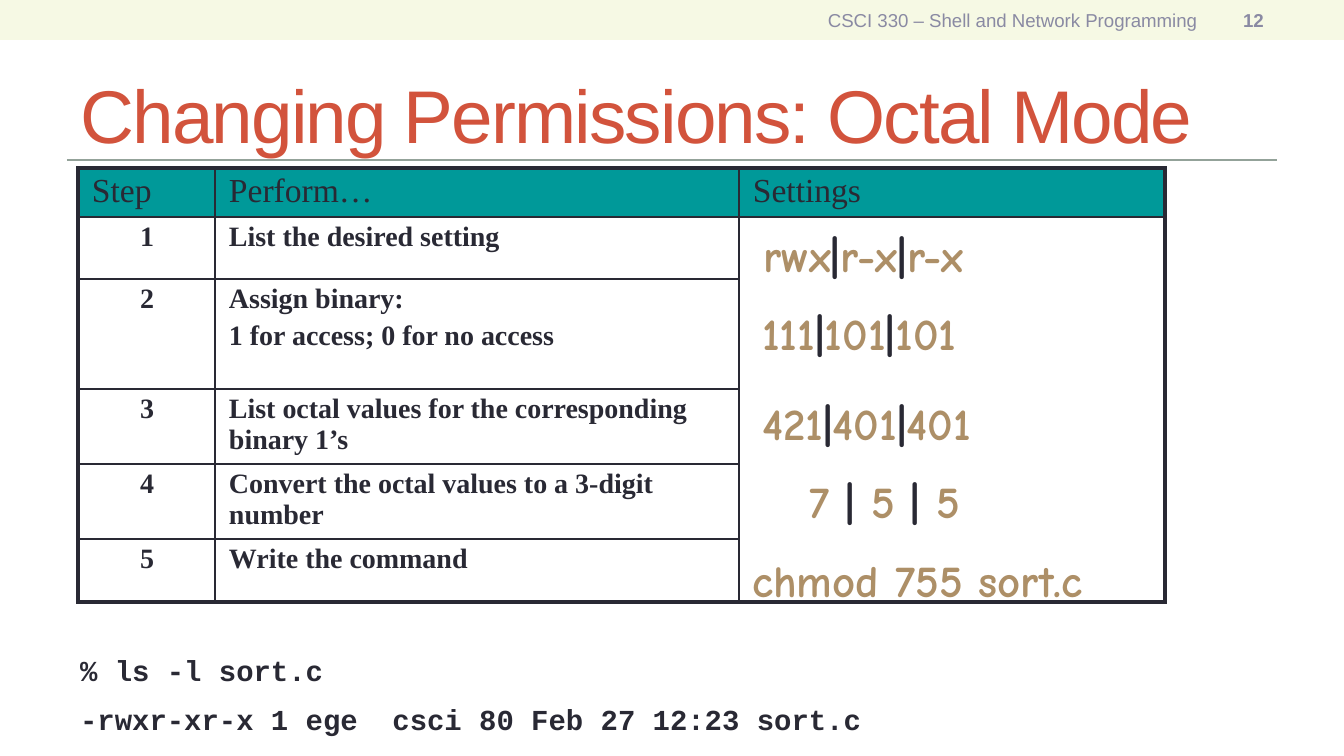
from pptx import Presentation
from pptx.dml.color import RGBColor as Rgb
from pptx.enum.shapes import MSO_CONNECTOR as Conn, MSO_SHAPE as Shape
from pptx.enum.text import MSO_ANCHOR as Anchor, MSO_AUTO_SIZE as Auto, PP_ALIGN as Align
from pptx.oxml import parse_xml
from pptx.oxml.ns import nsdecls
from pptx.util import Pt

SCALE = 914400 / 134.4
INK, TAN, TEAL, RED, GRAY = "292934", "AD8F67", "009999", "D2533C", "8A8AA3"
SMALL = dict(name="Arial", size=Pt(10))
HEAD = dict(name="Times New Roman", size=Pt(18), bold=False)
CELL = dict(name="Times New Roman", size=Pt(15), bold=True)
HAND = dict(name="Comic Neue", size=Pt(24), bold=True)
CODE = dict(name="Courier New", size=Pt(15.5), bold=True)
STEPS = [
    ["List the desired setting"],
    ["Assign binary:", "1 for access; 0 for no access"],
    ["List octal values for the corresponding binary 1’s"],
    ["Convert the octal values to a 3-digit number"],
    ["Write the command"],
]
COLS = [137, 524, 426]
ROWS = [49, 62, 110, 75, 75, 63]
VALUES = [
    ("rwx|r-x|r-x", 750, 221, 296),
    ("111|101|101", 749, 299, 313),
    ("421|401|401", 749, 389, 313),
    ("7 | 5 | 5", 796, 467, 226),
    ("chmod 755 sort.c", 739, 546, 415),
]


def px(*nums):
    """Turn px lengths into EMU."""
    return [round(n * SCALE) for n in nums]


def color(text):
    """Turn a hex string into a colour."""
    return Rgb.from_string(text)


def assign(item, values):
    """Set attributes from a dict."""
    for key, value in values.items():
        setattr(item, key, value)


def add_run(para, text, font, tint):
    """Add one formatted run to a paragraph."""
    run = para.add_run()
    run.text = text
    assign(run.font, font)
    run.font.color.rgb = color(tint)
    return run


def write(frame, lines, font, tint=INK, align=Align.LEFT, gap=0):
    """Write lines as paragraphs, with a gap between them."""
    for i, line in enumerate(lines):
        para = frame.add_paragraph() if i else frame.paragraphs[0]
        para.alignment = align
        para.space_before = Pt(gap if i else 0)
        add_run(para, line, font, tint)


def add_box(slide, box, **style):
    """Add an empty text box and return its frame."""
    frame = slide.shapes.add_textbox(*px(*box)).text_frame
    assign(frame, dict(word_wrap=True, auto_size=Auto.NONE) | style)
    return frame


def add_band(slide, box):
    """Draw the top band with course name and page number."""
    left, top, width, height = box
    band = slide.shapes.add_shape(Shape.RECTANGLE, *px(*box))
    band.shadow.inherit = False
    band.fill.solid()
    band.fill.fore_color.rgb = color("F6F9E4")
    band.line.fill.background()
    course = "CSCI 330 – Shell and Network Programming"
    for text, start, size, bold in ((course, 504, 706, False), ("12", 1210, 67, True)):
        frame = add_box(slide, (left + start, top + 2, size, height - 4),
                        vertical_anchor=Anchor.MIDDLE)
        write(frame, [text], SMALL | dict(bold=bold), GRAY, Align.RIGHT)


def add_title(slide, box):
    """Place the title and the rule under it."""
    left, top, width, height = box
    title = slide.shapes.title
    assign(title, dict(zip(("left", "top", "width", "height"), px(*box))))
    frame = title.text_frame
    assign(frame, dict(word_wrap=True, auto_size=Auto.NONE, vertical_anchor=Anchor.MIDDLE))
    para = frame.paragraphs[0]
    para.alignment = Align.LEFT
    run = add_run(para, "Changing Permissions: Octal Mode",
                  dict(name="Arial", size=Pt(40)), RED)
    run.font._element.set("spc", "-100")
    base = top + 101
    rule = slide.shapes.add_connector(Conn.STRAIGHT, *px(left, base, left + width, base))
    rule.line.width = Pt(0.75)
    rule.line.color.rgb = color("93A299")
    rule._element.spPr.append(parse_xml(f"<a:effectLst {nsdecls('a')}/>"))


def add_edges(cell, row, col):
    """Draw cell borders, thick along the outside of the table."""
    last = col == len(COLS) - 1
    base = row == len(ROWS) - 1 or (last and row > 0)
    outer = dict(L=col == 0, R=last, T=row == 0, B=base)
    props = cell._tc.get_or_add_tcPr()
    for side, thick in outer.items():
        props.append(parse_xml(
            f'<a:ln{side} {nsdecls("a")} w="{Pt(2.25 if thick else 1)}"><a:solidFill>'
            f'<a:srgbClr val="{INK}"/></a:solidFill></a:ln{side}>'))


def add_steps(slide, left, top):
    """Build the table of steps."""
    box = px(left, top, sum(COLS), sum(ROWS))
    table = slide.shapes.add_table(len(ROWS), len(COLS), *box).table
    for line, size in zip(table.columns, px(*COLS)):
        line.width = size
    for line, size in zip(table.rows, px(*ROWS)):
        line.height = size
    data = [[["Step"], ["Perform…"], ["Settings"]]]
    data += [[[str(n)], lines, []] for n, lines in enumerate(STEPS, 1)]
    pad = px(14, 13, 5, 5)
    names = ("margin_left", "margin_right", "margin_top", "margin_bottom")
    for r, row in enumerate(data):
        for c, lines in enumerate(row):
            cell = table.cell(r, c)
            assign(cell, dict(zip(names, pad)))
            add_edges(cell, r, c)
            if r:
                cell.fill.background()
            else:
                cell.fill.solid()
                cell.fill.fore_color.rgb = color(TEAL)
            align = Align.CENTER if r and c == 0 else Align.LEFT
            write(cell.text_frame, lines, CELL if r else HEAD, align=align, gap=3)
    table.cell(1, 2).merge(table.cell(len(ROWS) - 1, 2))


def add_value(slide, text, box):
    """Write one setting with dark bars between its parts."""
    para = add_box(slide, box).paragraphs[0]
    para.alignment = Align.LEFT
    for i, part in enumerate(text.split("|")):
        if i:
            add_run(para, "|", HAND, INK)
        add_run(para, part, HAND, TAN)


def add_code(slide, box):
    """Write the shell listing."""
    lines = ["% ls -l sort.c", "-rwxr-xr-x 1 ege  csci 80 Feb 27 12:23 sort.c"]
    write(add_box(slide, box), lines, CODE, gap=7.5)


def main():
    """Build and save the slide."""
    deck = Presentation()
    deck.slide_width, deck.slide_height = px(1344, 756)
    slide = deck.slides.add_slide(deck.slide_layouts[5])
    add_band(slide, (0, 0, 1344, 40))
    add_title(slide, (67, 59, 1210, 109))
    add_steps(slide, 78, 168)
    for text, left, top, width in VALUES:
        add_value(slide, text, (left, top, width, 67))
    add_code(slide, (67, 646, 1210, 100))
    deck.save("out.pptx")


if __name__ == "__main__":
    main()
